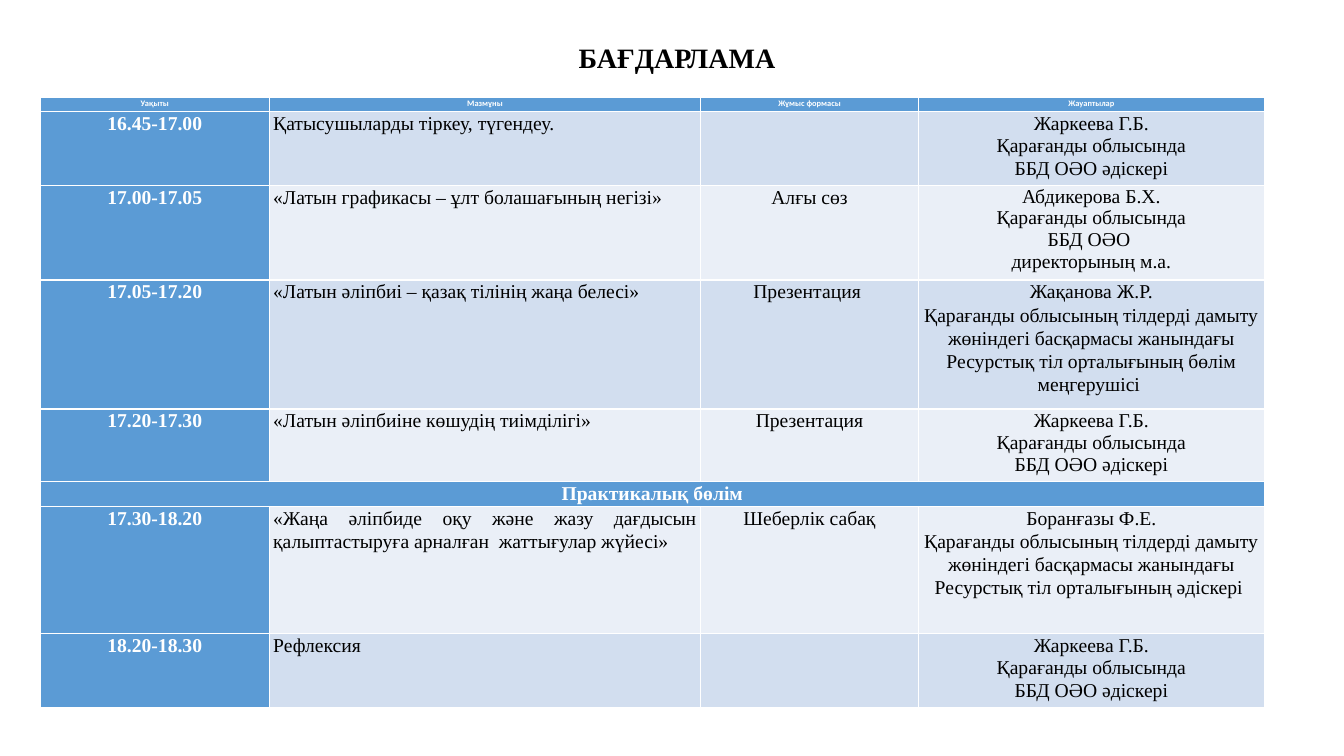
from dataclasses import dataclass

from pptx import Presentation
from pptx.dml.color import RGBColor
from pptx.enum.text import MSO_ANCHOR, MSO_AUTO_SIZE, PP_ALIGN
from pptx.util import Inches, Pt

CENTER, JUSTIFY = PP_ALIGN.CENTER, PP_ALIGN.JUSTIFY
MIDDLE, FIT_SHAPE = MSO_ANCHOR.MIDDLE, MSO_AUTO_SIZE.SHAPE_TO_FIT_TEXT


@dataclass(frozen=True)
class Theme:
    accent: str = "5B9BD5"
    bands: tuple = ("EAEFF7", "D2DEEF")
    light: str = "FFFFFF"
    dark: str = "000000"
    header_font: str = "Calibri"
    body_font: str = "Times New Roman"
    header_size: int = 6
    body_size: int = 14
    title_size: int = 20


THEME = Theme()
TITLE_ONLY = 5
COLUMN_WIDTHS = [2.27, 4.28, 2.16, 3.43]
ROW_HEIGHTS = [0.14, 0.71, 0.91, 1.28, 0.7, 0.24, 1.26, 0.71]
SPACING = {"L": 1.07, "S": 1.0}
METHODIST = "Жаркеева Г.Б.\nҚарағанды облысында\nББД ОӘО әдіскері"
CENTRE = (
    "Қарағанды облысының тілдерді дамыту жөніндегі басқармасы "
    "жанындағы Ресурстық тіл орталығының"
)
HEADERS = ["Уақыты", "Мазмұны", "Жұмыс формасы", "Жауаптылар"]
SECTION = ["Практикалық бөлім"]
PROGRAMME = [
    (HEADERS, "L"),
    (["16.45-17.00", "Қатысушыларды тіркеу, түгендеу.", "", METHODIST], "LSL"),
    (["17.00-17.05", "«Латын графикасы – ұлт болашағының негізі»", "Алғы сөз",
      "Абдикерова Б.Х.\nҚарағанды облысында\nББД ОӘО \nдиректорының м.а."], "SSSS"),
    (["17.05-17.20", "«Латын әліпбиі – қазақ тілінің жаңа белесі»", "Презентация ",
      f"Жақанова Ж.Р.\n{CENTRE} бөлім меңгерушісі "], "LL"),
    (["17.20-17.30", "«Латын әліпбиіне көшудің тиімділігі»", "Презентация",
      METHODIST], "LSS"),
    (SECTION, "L"),
    (["17.30-18.20",
      "«Жаңа әліпбиде оқу және жазу дағдысын қалыптастыруға арналған  жаттығулар жүйесі»",
      "Шеберлік сабақ", f"Боранғазы Ф.Е.\n{CENTRE} әдіскері "], "LL"),
    (["18.20-18.30", "Рефлексия", "", METHODIST], "LSL"),
]


def write(frame, text, *, size, color, font=THEME.body_font, bold=False,
          align=CENTER, spacing="L"):
    for index, line in enumerate(text.split("\n")):
        para = frame.paragraphs[0] if index == 0 else frame.add_paragraph()
        para.alignment = align
        para.line_spacing = SPACING[spacing[index]]
        span = para.add_run()
        span.text = line
        span.font.name = font
        span.font.size = Pt(size)
        span.font.bold = bold
        span.font.color.rgb = RGBColor.from_string(color)


deck = Presentation()
deck.slide_width, deck.slide_height = Inches(13.33), Inches(7.5)
page = deck.slides.add_slide(deck.slide_layouts[TITLE_ONLY])

title = page.shapes.title
title.left, title.top = Inches(5.63), Inches(0.35)
title.width, title.height = Inches(2.17), Inches(0.44)
title.text_frame.word_wrap = False
title.text_frame.auto_size = FIT_SHAPE
title.text_frame.vertical_anchor = MIDDLE
write(title.text_frame, "БАҒДАРЛАМА", size=THEME.title_size,
      color=THEME.dark, bold=True, spacing="S")

table = page.shapes.add_table(
    len(ROW_HEIGHTS), len(COLUMN_WIDTHS), Inches(0.4), Inches(0.97),
    Inches(sum(COLUMN_WIDTHS)), Inches(sum(ROW_HEIGHTS)),
).table
table.horz_banding = False
for column, width in zip(table.columns, COLUMN_WIDTHS):
    column.width = Inches(width)
for row, height in zip(table.rows, ROW_HEIGHTS):
    row.height = Inches(height)

for row_index, (texts, spacing) in enumerate(PROGRAMME):
    is_header = texts is HEADERS
    if texts is SECTION:
        table.cell(row_index, 0).merge(table.cell(row_index, len(COLUMN_WIDTHS) - 1))
    for column_index, text in enumerate(texts):
        cell = table.cell(row_index, column_index)
        is_accent = is_header or column_index == 0
        fill = THEME.accent if is_accent else THEME.bands[row_index % 2]
        cell.fill.solid()
        cell.fill.fore_color.rgb = RGBColor.from_string(fill)
        cell.margin_left = cell.margin_right = Inches(0.04)
        cell.margin_top = cell.margin_bottom = 0
        if text:
            write(
                cell.text_frame, text,
                size=THEME.header_size if is_header else THEME.body_size,
                font=THEME.header_font if is_header else THEME.body_font,
                color=THEME.light if is_accent else THEME.dark,
                bold=is_accent,
                align=JUSTIFY if column_index == 1 and not is_header else CENTER,
                spacing=spacing if column_index == 3 else "L",
            )

deck.save("out.pptx")
